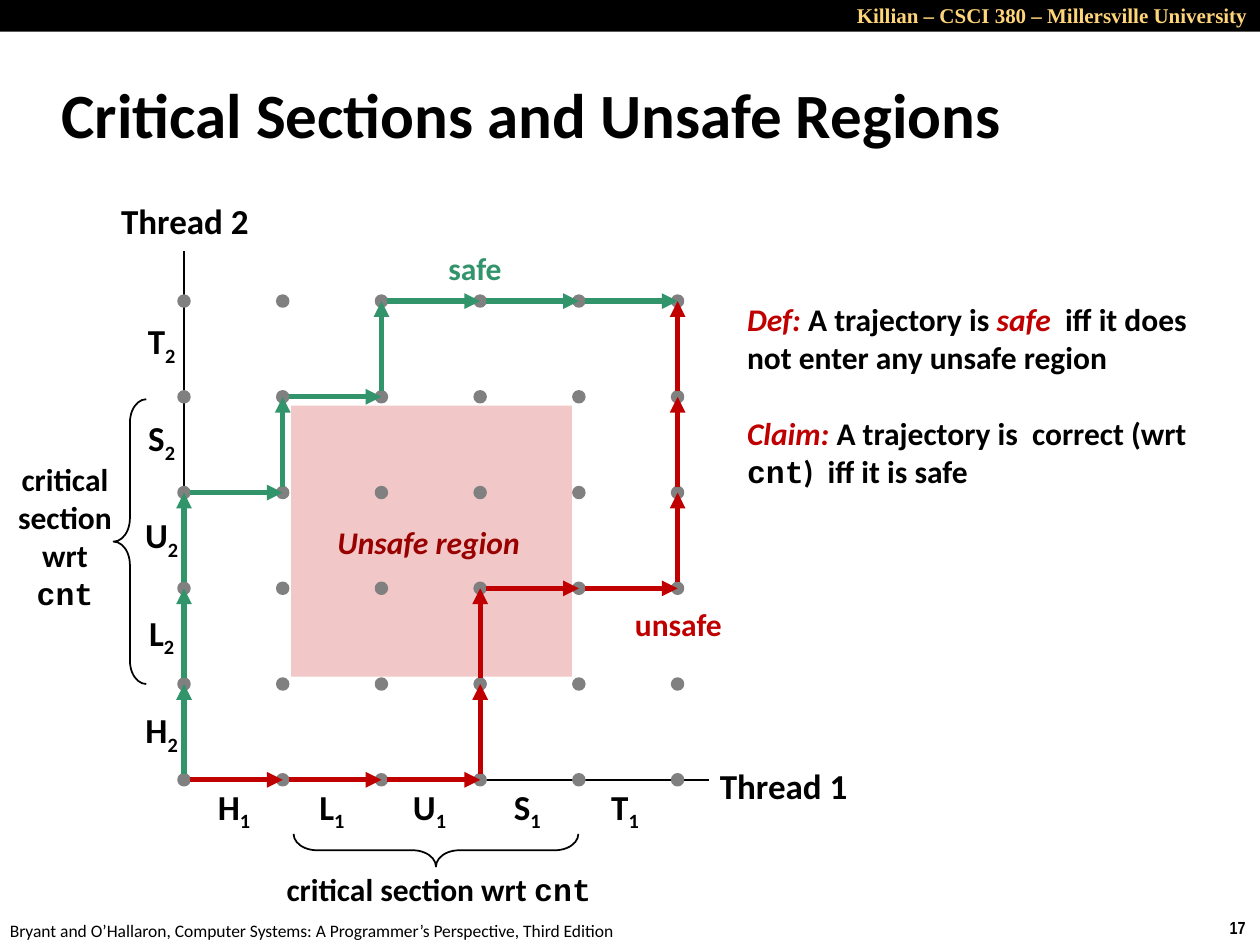
from dataclasses import dataclass, field

import lxml.etree
import pptx
import pptx.dml.color
import pptx.enum.shapes
import pptx.enum.text
import pptx.oxml.ns
import pptx.util

Cm, Pt = pptx.util.Cm, pptx.util.Pt
SHAPE = pptx.enum.shapes.MSO_SHAPE
ALIGN = pptx.enum.text.PP_ALIGN
ANCHOR = pptx.enum.text.MSO_ANCHOR
AUTO = pptx.enum.text.MSO_AUTO_SIZE

COLORS = {
    "black": "000000", "gold": "FFD579", "pink": "F1C7C7", "gray": "808080",
    "maroon": "990000", "red": "C00000", "green": "32946A",
}
BASE = {"name": "Calibri", "size": Pt(18), "bold": True}
CODE = {"name": "Courier New"}

# State grid: lower left node, spacing and node count per side (cm)
X0, Y0, DX, DY, NODES = 3.71, 15.72, 1.99, 1.93, 6
DOT = 0.2
ARROW_GAP = 0.12
STEPS = "HLUST"


@dataclass
class Run:
    text: str
    color: str = "black"
    fmt: dict = field(default_factory=dict)
    subscript: bool = False


@dataclass
class Label:
    box: tuple[float, float, float, float]
    paragraphs: list[list[Run]]
    align: ALIGN = ALIGN.LEFT
    anchor: ANCHOR = ANCHOR.TOP
    frame: dict = field(default_factory=dict)
    space_before: float = 0


@dataclass
class Trajectory:
    color: str
    moves: str  # R = one step right, U = one step up
    start: tuple[int, int] = (0, 0)


CENTERED = {"align": ALIGN.CENTER, "anchor": ANCHOR.MIDDLE}
WRAPPED = {"word_wrap": True}
RED_ITALIC = {"color": "red", "fmt": {"italic": True}}


def rgb(name: str) -> pptx.dml.color.RGBColor:
    return pptx.dml.color.RGBColor.from_string(COLORS[name])


def node(col: int, row: int) -> tuple[float, float]:
    return X0 + col * DX, Y0 - row * DY


def add_label(slide, label: Label) -> None:
    tf = slide.shapes.add_textbox(*map(Cm, label.box)).text_frame
    settings = {"word_wrap": False, "auto_size": AUTO.SHAPE_TO_FIT_TEXT,
                "vertical_anchor": label.anchor, **label.frame}
    for name, value in settings.items():
        setattr(tf, name, value)
    for i, runs in enumerate(label.paragraphs):
        p = tf.add_paragraph() if i else tf.paragraphs[0]
        p.alignment = label.align
        if i:
            p.space_before = Pt(label.space_before)
        for run in runs:
            r = p.add_run()
            r.text = run.text
            for name, value in {**BASE, **run.fmt}.items():
                setattr(r.font, name, value)
            r.font.color.rgb = rgb(run.color)
            if run.subscript:
                r.font._element.set("baseline", "-25000")


def add_filled(slide, kind: SHAPE, box: tuple, color: str, line: float = 0) -> None:
    sp = slide.shapes.add_shape(kind, *map(Cm, box))
    sp.shadow.inherit = False
    sp.fill.solid()
    sp.fill.fore_color.rgb = rgb(color)
    if line:
        sp.line.color.rgb = rgb(color)
        sp.line.width = Pt(line)
    else:
        sp.line.fill.background()


def add_brace(slide, box: tuple, rotation: float = 0) -> None:
    sp = slide.shapes.add_shape(SHAPE.LEFT_BRACE, *map(Cm, box))
    sp.shadow.inherit = False
    sp.rotation = rotation
    sp.adjustments[0] = 0.715
    sp.fill.background()
    sp.line.color.rgb = rgb("black")
    sp.line.width = Pt(1)


def add_line(slide, start: tuple, end: tuple, color: str, width: float,
             arrow: bool = False) -> None:
    straight = pptx.enum.shapes.MSO_CONNECTOR.STRAIGHT
    cxn = slide.shapes.add_connector(straight, *map(Cm, (*start, *end)))
    cxn.line.color.rgb = rgb(color)
    cxn.line.width = Pt(width)
    qn = pptx.oxml.ns.qn
    if arrow:
        ln = cxn.line._get_or_add_ln()
        lxml.etree.SubElement(ln, qn("a:tailEnd"), type="triangle")
    lxml.etree.SubElement(cxn._element.spPr, qn("a:effectLst"))


def add_trajectory(slide, trajectory: Trajectory) -> None:
    """Draw one arrow per move, leaving a small gap after each start node."""
    col, row = trajectory.start
    for move in trajectory.moves:
        right, up = (1, 0) if move == "R" else (0, 1)
        x, y = node(col, row)
        col, row = col + right, row + up
        start = (x + right * ARROW_GAP, y - up * ARROW_GAP)
        add_line(slide, start, node(col, row), trajectory.color, 3, arrow=True)


def step_labels() -> list[Label]:
    """Labels of the steps of both threads, centred between the nodes."""
    labels = []
    for i, step in enumerate(STEPS):
        centers = {"1": (4.72 + 1.97 * i, 16.31), "2": (3.26, 14.76 - 1.96 * i)}
        for thread, (x, y) in centers.items():
            big = {"size": Pt(20)}
            runs = [Run(step, fmt=big), Run(thread, fmt=big, subscript=True)]
            labels.append(Label((x - 0.6, y - 0.56, 1.2, 1.12), [runs], **CENTERED))
    return labels


def text_labels() -> list[Label]:
    plain = {"size": Pt(10), "bold": False}
    number = {"name": "Arial Narrow", "size": Pt(10)}
    header = {"name": "Times New Roman", "size": Pt(12)}
    thread = {"size": Pt(20)}
    critical = [[Run("critical section wrt "), Run("cnt", fmt=CODE)]]
    definition = [
        [Run("Def: ", **RED_ITALIC), Run("A trajectory is "),
         Run("safe  ", **RED_ITALIC),
         Run("iff it does not enter any unsafe region")],
        [Run("Claim: ", **RED_ITALIC), Run("A trajectory is  correct (wrt "),
         Run("cnt", fmt=CODE), Run(")  iff it is safe")],
    ]
    fixed = {**WRAPPED, "auto_size": AUTO.NONE, "margin_top": 0, "margin_bottom": 0}
    return [
        Label((24.54, 18.36, 0.86, 0.69), [[Run("17", fmt=number)]]),
        Label((-0.05, 18.42, 12.9, 0.69), [[Run(
            "Bryant and O’Hallaron, Computer Systems: "
            "A Programmer’s Perspective, Third Edition", fmt=plain)]]),
        Label((11.43, -0.08, 13.97, 0.76), [[Run(
            "Killian – CSCI 380 – Millersville University", "gold", header)]],
            align=ALIGN.RIGHT, frame=WRAPPED),
        Label((0.99, 1.22, 21.08, 2.11), [[Run(
            "Critical Sections and Unsafe Regions", fmt={"size": Pt(36)})]],
            anchor=ANCHOR.MIDDLE, frame={**WRAPPED, "auto_size": AUTO.NONE}),
        Label((14.25, 15.27, 3.1, 1.12), [[Run("Thread 1", fmt=thread)]], **CENTERED),
        Label((2.18, 3.89, 3.1, 1.12), [[Run("Thread 2", fmt=thread)]], **CENTERED),
        Label((5.49, 17.42, 6.71, 1.02), critical, **CENTERED),
        Label((0, 9.14, 2.62, 3.33), critical, frame=WRAPPED, **CENTERED),
        Label((6.55, 10.41, 4.24, 1.02),
              [[Run("Unsafe region", "maroon", {"italic": True})]]),
        Label((14.81, 6.05, 9.73, 4.62), definition, frame=fixed, space_before=22),
        Label((12.55, 12.07, 2.29, 1.02), [[Run("unsafe", "red")]]),
        Label((8.79, 4.9, 1.6, 1.02), [[Run("safe", "green")]]),
    ]


def main() -> None:
    prs = pptx.Presentation()
    prs.slide_width, prs.slide_height = Cm(25.4), Cm(19.05)
    s = prs.slides.add_slide(prs.slide_layouts[6])

    add_filled(s, SHAPE.RECTANGLE, (0, 0, 25.4, 0.64), "black")
    add_filled(s, SHAPE.RECTANGLE, (5.87, 8.18, 5.66, 5.46), "pink")
    for axis_end in ((14.3, Y0), (X0, 5.05)):
        add_line(s, (X0, Y0), axis_end, "black", 1)
    for col in range(NODES):
        for row in range(NODES):
            x, y = node(col, row)
            box = (x - DOT / 2, y - DOT / 2, DOT, DOT)
            add_filled(s, SHAPE.OVAL, box, "gray", line=2)
    add_brace(s, (2.29, 8.05, 0.66, 5.74))
    add_brace(s, (8.46, 14.27, 0.66, 5.74), rotation=270)
    for label in step_labels() + text_labels():
        add_label(s, label)
    for trajectory in (Trajectory("red", "RRRUURRUUU"),
                       Trajectory("green", "UUURURURRR")):
        add_trajectory(s, trajectory)
    prs.save("out.pptx")


if __name__ == "__main__":
    main()
